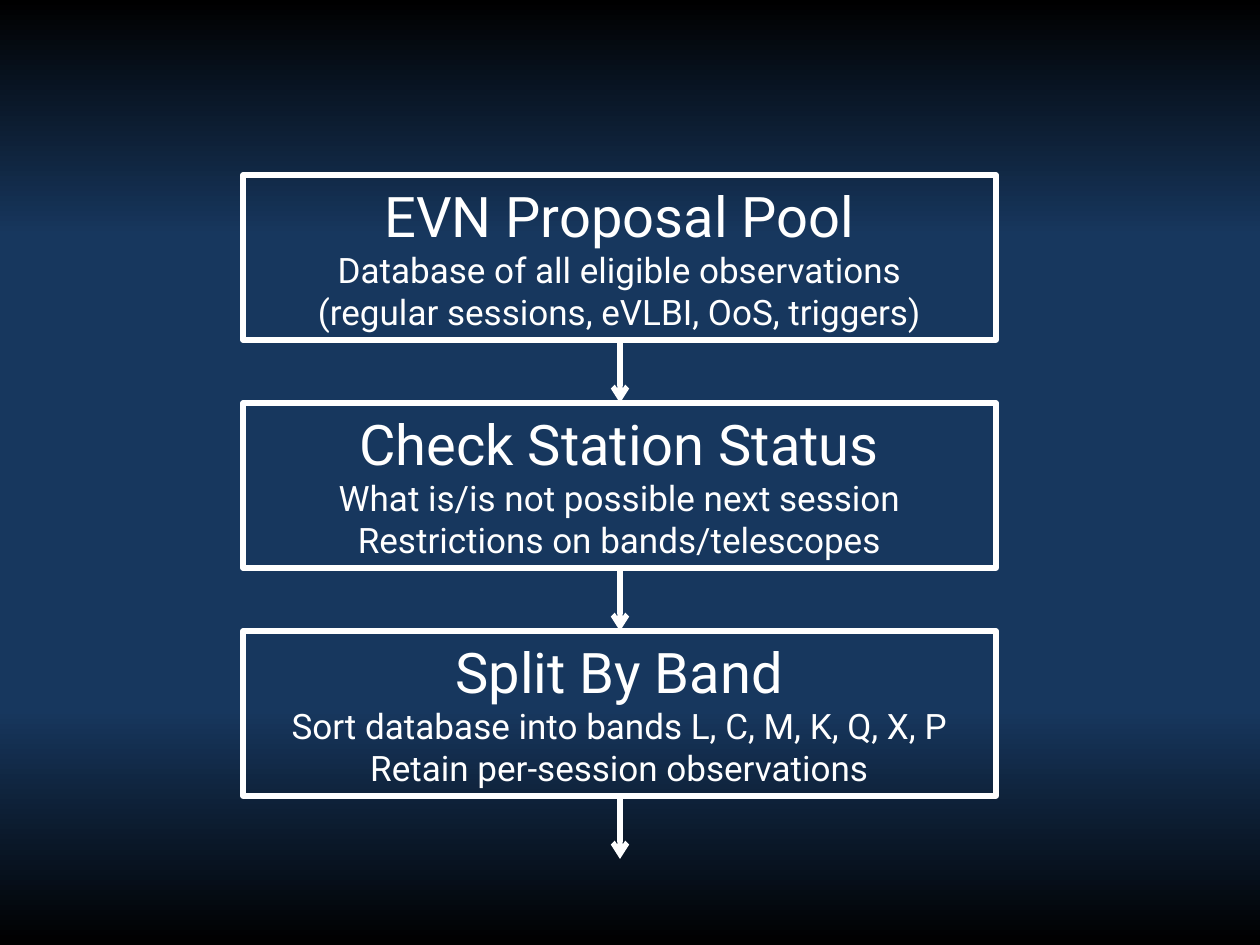
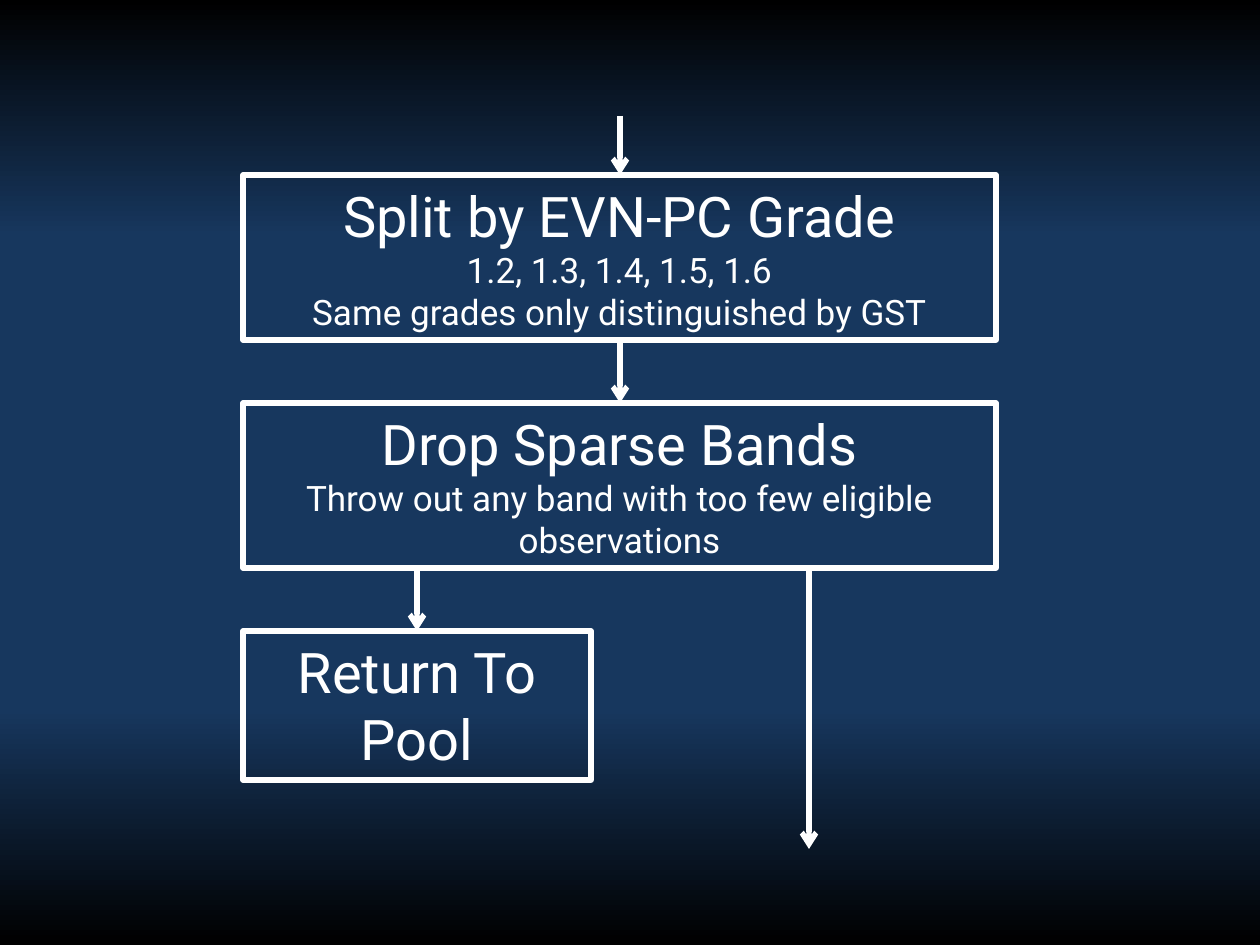
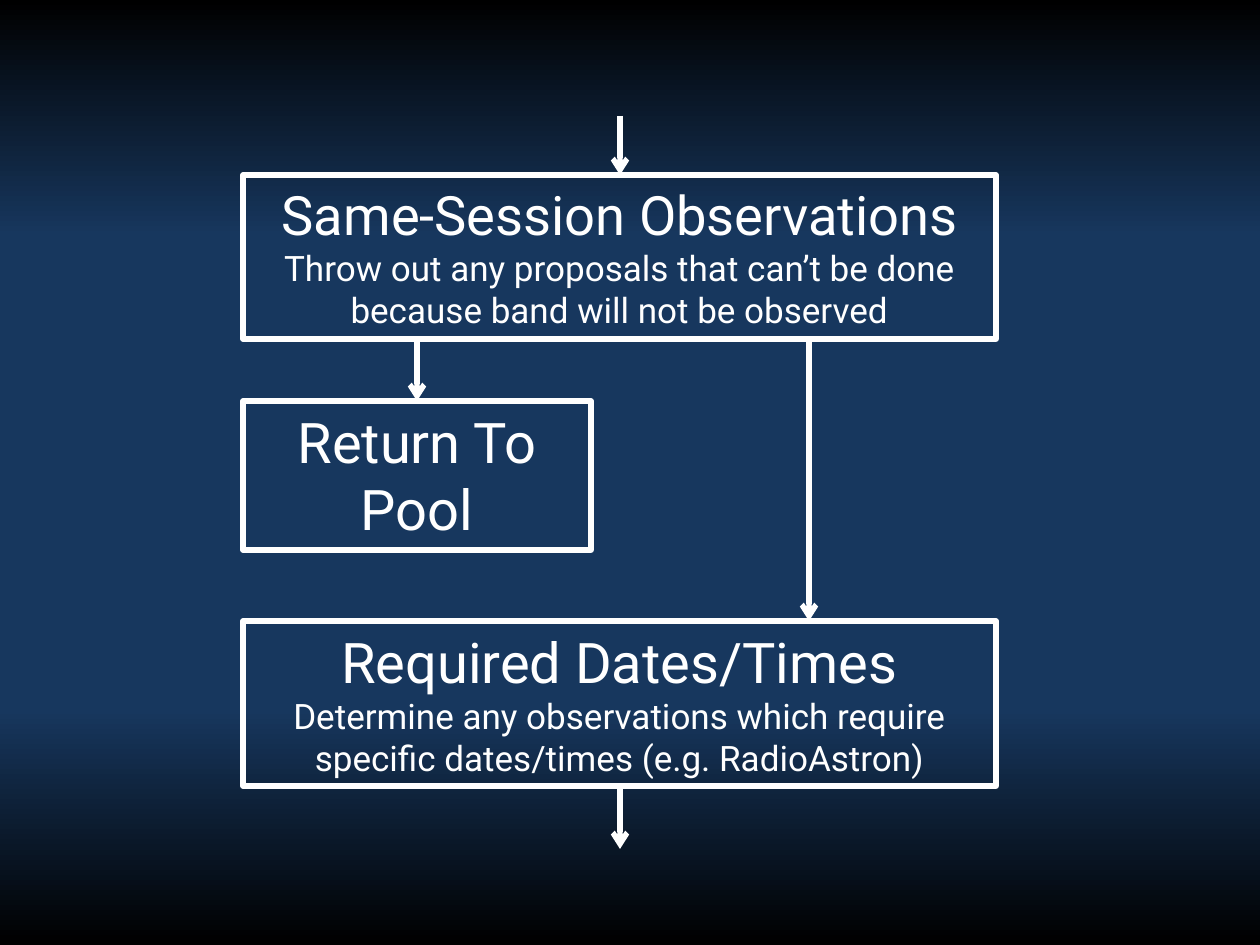
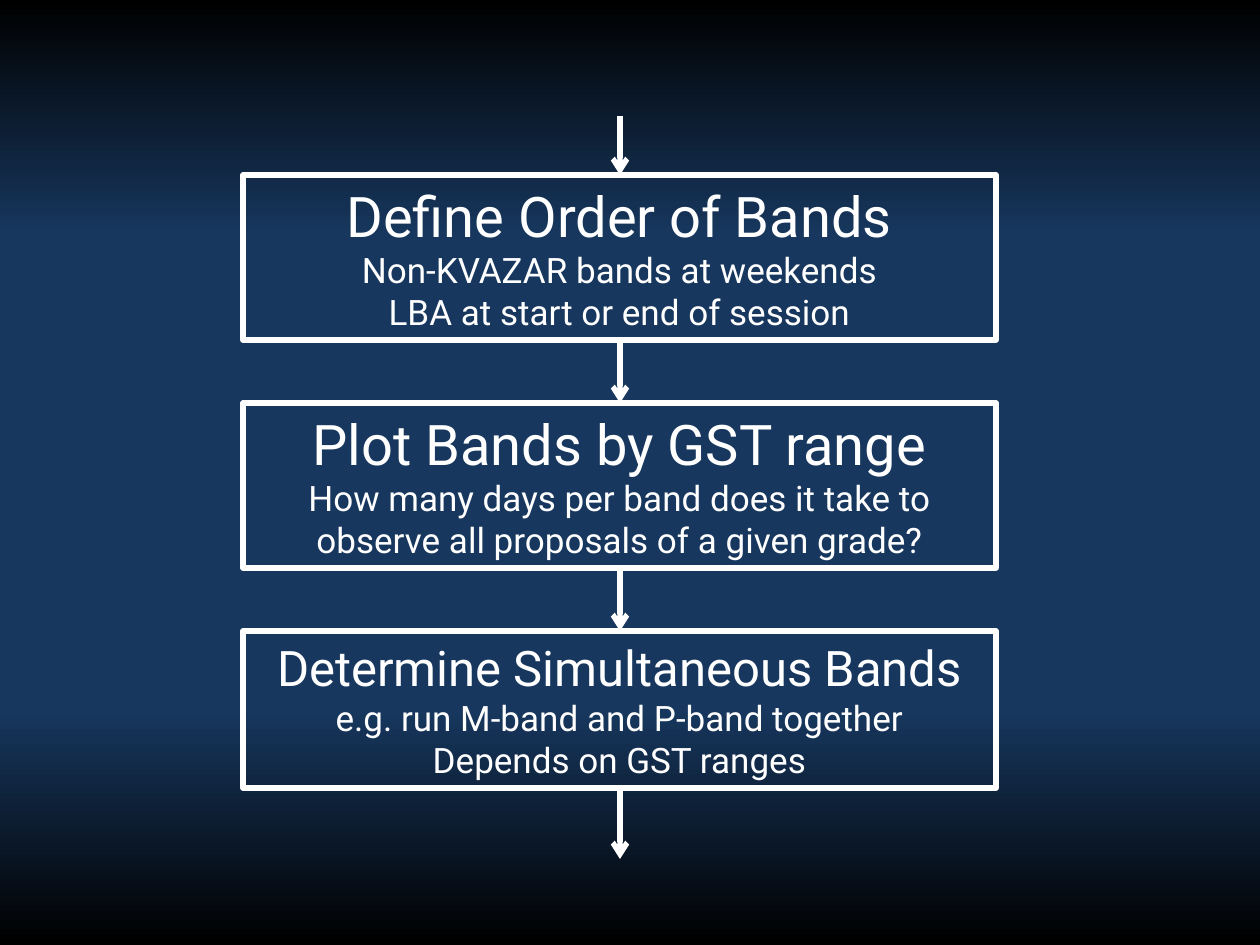
from pptx import Presentation
from pptx.dml.color import RGBColor
from pptx.enum.shapes import MSO_CONNECTOR
from pptx.enum.text import MSO_ANCHOR, MSO_AUTO_SIZE, PP_ALIGN
from pptx.oxml import parse_xml
from pptx.oxml.ns import nsdecls, qn
from pptx.util import Inches, Pt

STEP, BRANCH = "step", "branch"
WHITE = "FFFFFF"
BACKDROP = [(0, "000000"), (25, "17375E"), (75, "17375E"), (100, "000000")]
FONT, NOTE_SIZE, LINE_WIDTH = "Roboto", 20, 3

SLIDES = [
    {
        "cards": [
            (STEP, 175, 32, "EVN Proposal Pool",
             ["Database of all eligible observations", "(regular sessions, eVLBI, OoS, triggers)"]),
            (STEP, 403, 32, "Check Station Status",
             ["What is/is not possible next session", "Restrictions on bands/telescopes"]),
            (STEP, 631, 32, "Split By Band",
             ["Sort database into bands L, C, M, K, Q, X, P", "Retain per-session observations"]),
        ],
        "links": [("centre", 0, 1), ("centre", 1, 2), ("centre", 2, "exit")],
        "exit": 859,
    },
    {
        "cards": [
            (STEP, 175, 32, "Split by EVN-PC Grade",
             ["1.2, 1.3, 1.4, 1.5, 1.6", "Same grades only distinguished by GST"]),
            (STEP, 403, 32, "Drop Sparse Bands",
             ["Throw out any band with too few eligible observations"]),
            (BRANCH, 631, 32, "Return To Pool", []),
        ],
        "links": [("centre", "entry", 0), ("centre", 0, 1), ("left", 1, 2), ("right", 1, "exit")],
        "exit": 849,
    },
    {
        "cards": [
            (STEP, 175, 31, "Same-Session Observations",
             ["Throw out any proposals that can’t be done because band will not be observed"]),
            (BRANCH, 401, 32, "Return To Pool", []),
            (STEP, 621, 32, "Required Dates/Times",
             ["Determine any observations which require specific dates/times (e.g. RadioAstron)"]),
        ],
        "links": [("centre", "entry", 0), ("left", 0, 1), ("right", 0, 2), ("centre", 2, "exit")],
        "exit": 849,
    },
    {
        "cards": [
            (STEP, 175, 32, "Define Order of Bands",
             ["Non-KVAZAR bands at weekends", "LBA at start or end of session"]),
            (STEP, 403, 32, "Plot Bands by GST range",
             ["How many days per band does it take to observe all proposals of a given grade?"]),
            (STEP, 631, 28, "Determine Simultaneous Bands",
             ["e.g. run M-band and P-band together", "Depends on GST ranges"]),
        ],
        "links": [("centre", "entry", 0), ("centre", 0, 1), ("centre", 1, 2), ("centre", 2, "exit")],
        "exit": 859,
    },
]

CARD_LEFT, ENTRY = 243, 116
CARD_WIDTHS = {STEP: 753, BRANCH: 348}
STEP_HEIGHTS = {32: 165, 31: 164, 28: 157}
BRANCH_HEIGHT = 149
LANES = {"left": 417, "centre": 620, "right": 809}
FRAME = {
    "word_wrap": True,
    "auto_size": MSO_AUTO_SIZE.SHAPE_TO_FIT_TEXT,
    "vertical_anchor": MSO_ANCHOR.TOP,
}


def px(length):
    return round(length * 914400 / 126)


def colour(value):
    return RGBColor.from_string(value)


def set_all(target, values):
    for key, value in values.items():
        setattr(target, key, value)


def paint_backdrop(master):
    fill = master.background.fill
    fill.gradient()
    fill.gradient_angle = 270
    stops = master.element.xpath(".//p:bg//a:gsLst")[0]
    for stop in list(stops):
        stops.remove(stop)
    for position, value in BACKDROP:
        stops.append(parse_xml(
            f'<a:gs {nsdecls("a")} pos="{position * 1000}"><a:srgbClr val="{value}"/></a:gs>'))


def draw_line(line):
    line.color.rgb = colour(WHITE)
    line.width = Pt(LINE_WIDTH)


def card_height(kind, title_size):
    return BRANCH_HEIGHT if kind == BRANCH else STEP_HEIGHTS[title_size]


def add_card(slide, kind, top, title_size, title, notes):
    card = slide.shapes.add_textbox(
        px(CARD_LEFT), px(top), px(CARD_WIDTHS[kind]), px(card_height(kind, title_size)))
    draw_line(card.line)
    frame = card.text_frame
    set_all(frame, FRAME)
    frame.text = "\n".join([title, *notes])
    for index, paragraph in enumerate(frame.paragraphs):
        paragraph.alignment = PP_ALIGN.CENTER
        font = paragraph.runs[0].font
        set_all(font, {"name": FONT, "size": Pt(NOTE_SIZE if index else title_size)})
        font.color.rgb = colour(WHITE)


def add_arrow(slide, x, start, end):
    arrow = slide.shapes.add_connector(MSO_CONNECTOR.STRAIGHT, px(x), px(start), px(x), px(end))
    draw_line(arrow.line)
    outline = arrow.line._get_or_add_ln()
    outline.append(parse_xml(f'<a:tailEnd {nsdecls("a")} type="arrow"/>'))
    arrow.element.find(qn("p:spPr")).append(parse_xml(f'<a:effectLst {nsdecls("a")}/>'))


def build_slide(deck, content):
    slide = deck.slides.add_slide(deck.slide_layouts.get_by_name("Blank"))
    starts, ends = {"entry": ENTRY}, {"exit": content["exit"]}
    for index, (kind, top, title_size, title, notes) in enumerate(content["cards"]):
        add_card(slide, kind, top, title_size, title, notes)
        starts[index] = top + card_height(kind, title_size)
        ends[index] = top
    for lane, source, target in content["links"]:
        add_arrow(slide, LANES[lane], starts[source], ends[target])


def main():
    deck = Presentation()
    set_all(deck, {"slide_width": Inches(10), "slide_height": Inches(7.5)})
    paint_backdrop(deck.slide_master)
    for content in SLIDES:
        build_slide(deck, content)
    deck.save("out.pptx")


if __name__ == "__main__":
    main()
